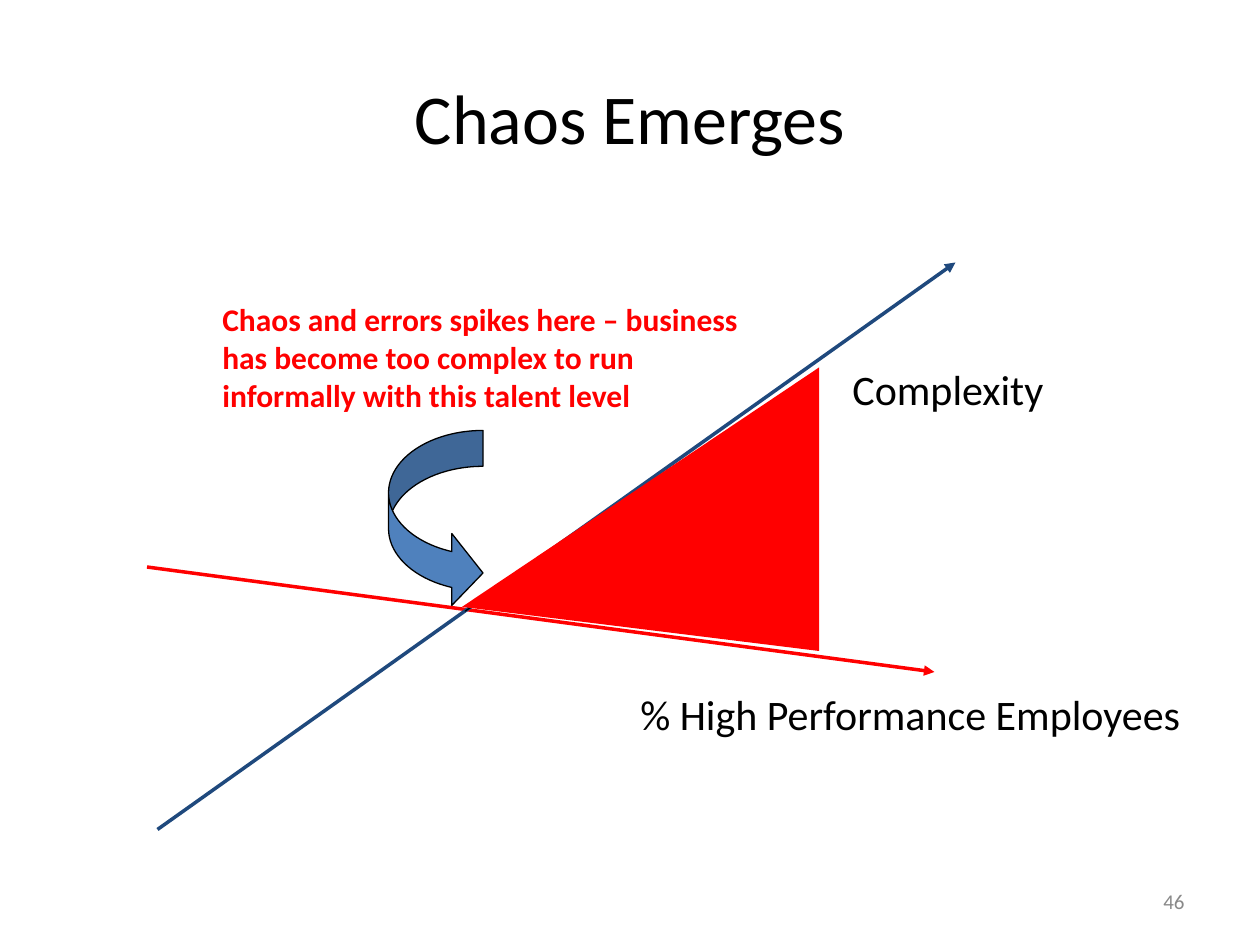
from pptx import Presentation
from pptx.dml.color import RGBColor
from pptx.enum.shapes import MSO_CONNECTOR, MSO_SHAPE
from pptx.enum.text import MSO_ANCHOR, PP_ALIGN
from pptx.oxml.ns import qn
from pptx.util import Pt
from lxml.etree import SubElement

PX = 7620  # EMU per px, 120 px to the inch
BLACK = RGBColor(0, 0, 0)
RED = RGBColor(0xFF, 0, 0)
NAVY = RGBColor(0x1F, 0x49, 0x7D)
BLUE = RGBColor(0x4F, 0x81, 0xBD)
GRAY = RGBColor(0x89, 0x89, 0x89)


def emu(*nums):
    return [n * PX for n in nums]


def write(shape, text, size, color, align=PP_ALIGN.LEFT, bold=False):
    para = shape.text_frame.paragraphs[0]
    para.text = text
    para.alignment = align
    font = para.font
    font.name, font.size, font.bold = "Calibri", Pt(size), bold
    font.color.rgb = color


def label(slide, box, text, size, color, **style):
    shape = slide.shapes.add_textbox(*emu(*box))
    shape.text_frame.word_wrap = False
    write(shape, text, size, color, **style)
    return shape


def trend(slide, start, end, color):
    line = slide.shapes.add_connector(
        MSO_CONNECTOR.STRAIGHT, *emu(*start, *end))
    line.line.color.rgb = color
    line.line.width = Pt(2)
    SubElement(line.line._get_or_add_ln(), qn("a:tailEnd"), type="triangle")
    SubElement(line._element.spPr, qn("a:effectLst"))


def paint(shape, fill, edge=None):
    shape.shadow.inherit = False
    shape.fill.solid()
    shape.fill.fore_color.rgb = fill
    if edge is None:
        shape.line.fill.background()
    else:
        shape.line.color.rgb = edge
        shape.line.width = Pt(0.75)


def outline(slide, points):
    first, *rest = points
    pen = slide.shapes.build_freeform(*first, scale=PX)
    pen.add_line_segments(rest, close=True)
    return pen.convert_to_shape()


def heading(slide, box):
    title = slide.shapes.title
    title.left, title.top, title.width, title.height = emu(*box)
    title.text_frame.vertical_anchor = MSO_ANCHOR.MIDDLE
    write(title, "Chaos Emerges", 40, BLACK, PP_ALIGN.CENTER)


def diagram(slide, left, top, width, height):
    def at(x, y):
        return left + x, top + y

    # Falling talent line
    trend(slide, at(0, 290), at(width - 20, 390), RED)
    label(slide, (*at(458, 400), 602, 60),
          "% High Performance Employees", 24, BLACK)

    # Rising complexity line
    trend(slide, at(10, height), at(width, 0), NAVY)

    # Sliver where the lines cross
    paint(outline(slide, [at(303, 332), at(309, 328), at(306, 330)]),
          BLUE, BLACK)

    # Warning and its curved arrow
    label(slide, (*at(60, 30), 518, 121),
          "Chaos and errors spikes here – business\v"
          "has become too complex to run\v"
          "informally with this talent level", 18, RED, bold=True)
    arrow = slide.shapes.add_shape(
        MSO_SHAPE.CURVED_RIGHT_ARROW, *emu(*at(230, 160), 90, 170))
    for i, value in enumerate((0.38, 0.76, 0.33)):
        arrow.adjustments[i] = value
    paint(arrow, BLUE, BLACK)

    # Widening gap
    paint(outline(slide, [at(300, 328), at(640, 100), at(640, 370)]), RED)
    label(slide, (*at(660, 90), 222, 60), "Complexity", 24, BLACK)


def footer(slide, box):
    number = label(slide, box, "46", 12, GRAY, align=PP_ALIGN.RIGHT)
    number.text_frame.word_wrap = True
    number.text_frame.vertical_anchor = MSO_ANCHOR.MIDDLE


def main():
    deck = Presentation()
    deck.slide_width, deck.slide_height = emu(1200, 900)
    slide = deck.slides.add_slide(deck.slide_layouts[5])
    heading(slide, (60, 36, 1080, 150))
    diagram(slide, 140, 250, 770, 540)
    footer(slide, (860, 834, 280, 48))
    deck.save("out.pptx")


if __name__ == "__main__":
    main()
